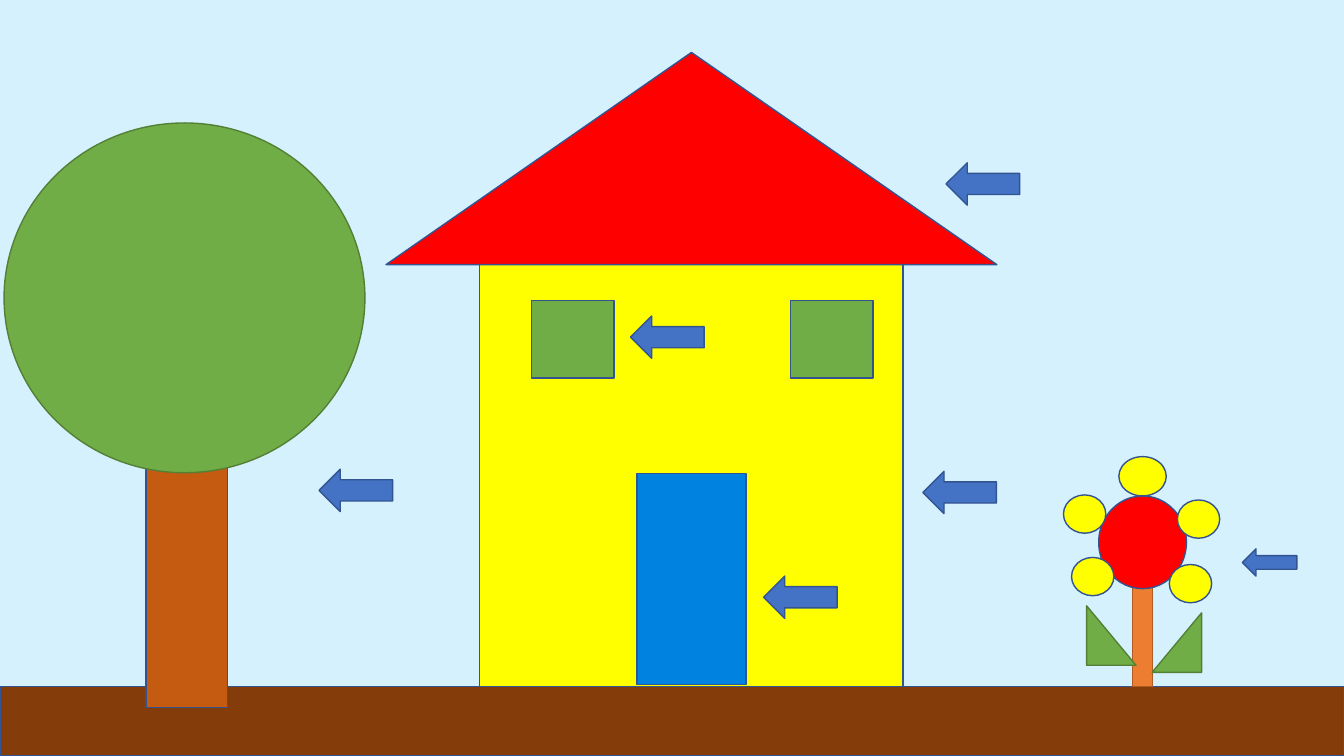
from pptx import Presentation
from pptx.dml.color import RGBColor
from pptx.enum.shapes import MSO_SHAPE as Preset
from pptx.util import Inches, Pt

THEME = {
    "sky": "D5F1FE", "soil": "843C0B", "wall": "FFFF00", "red": "FF0000",
    "door": "0082E0", "green": "70AD47", "stem": "ED7D31", "trunk": "C55A11",
    "arrow": "4472C4",
    "outline": "325491", "leaf_outline": "538035", "stem_outline": "AF5C24",
    "line_width": 1,
}
CELL = 0.1  # inches per grid column and row
COLUMNS, ROWS = 133.33, 75
GROUND = 68.1  # row where the soil starts


def grid(cells):
    return Inches(cells * CELL)


def draw(parent, preset, left, top, width, height, fill, outline="outline", rotation=0):
    shape = parent.shapes.add_shape(preset, *map(grid, (left, top, width, height)))
    shape.shadow.inherit = False
    shape.fill.solid()
    shape.fill.fore_color.rgb = RGBColor.from_string(THEME[fill])
    shape.line.color.rgb = RGBColor.from_string(THEME[outline])
    shape.line.width = Pt(THEME["line_width"])
    shape.rotation = rotation
    return shape


presentation = Presentation()
presentation.slide_width, presentation.slide_height = grid(COLUMNS), grid(ROWS)
slide = presentation.slides.add_slide(presentation.slide_layouts[6])

# Sky and soil
slide.background.fill.solid()
slide.background.fill.fore_color.rgb = RGBColor.from_string(THEME["sky"])
draw(slide, Preset.RECTANGLE, 0, GROUND, COLUMNS, ROWS - GROUND, "soil")

# House, centred on one axis
house = slide.shapes.add_group_shape()
house_axis, eaves = 68.6, 26.25
for preset, top, width, height, fill in [
    (Preset.RECTANGLE, eaves, 42, GROUND - eaves, "wall"),
    (Preset.ISOSCELES_TRIANGLE, 5.2, 60.6, eaves - 5.2, "red"),
    (Preset.RECTANGLE, 47, 10.8, 20.9, "door"),
]:
    draw(house, preset, house_axis - width / 2, top, width, height, fill)
for window_left in (78.4, 52.7):
    draw(house, Preset.RECTANGLE, window_left, 29.8, 8.2, 7.7, "green")

# Flower: stem, centre, leaves, petals
flower = slide.shapes.add_group_shape()
flower_axis = 113.35
draw(flower, Preset.RECTANGLE, flower_axis - 1, 52.2, 2, GROUND - 52.2, "stem", "stem_outline")
draw(flower, Preset.OVAL, flower_axis - 4.35, 49.2, 8.7, 9.2, "red")
for leaf_left, leaf_top, rotation in [(113.8, 61.3, 270), (107.3, 60.6, 90)]:
    leaf = draw(flower, Preset.RIGHT_TRIANGLE, leaf_left, leaf_top, 5.9, 4.9,
                "green", "leaf_outline", rotation)
leaf.element.spPr.xfrm.set("flipH", "1")  # the left leaf is mirrored
draw(flower, Preset.OVAL, flower_axis - 2.35, 45.3, 4.7, 3.9, "wall")
for petal_left, petal_top in [(116.8, 49.6), (116, 56), (105.5, 49.1), (106.3, 55.3)]:
    draw(flower, Preset.OVAL, petal_left, petal_top, 4.2, 3.8, "wall")

# Tree
tree = slide.shapes.add_group_shape()
draw(tree, Preset.RECTANGLE, 14.5, 38.5, 8.1, 31.7, "trunk")
draw(tree, Preset.OVAL, 0.4, 12.2, 35.8, 34.7, "green", "leaf_outline")

# Arrows pointing left at the parts
large, small = (4.2, 7.3), (2.7, 5.4)
for arrow_left, arrow_top, size in [
    (95.4, 14.6, large),   # roof
    (64.1, 29.8, large),   # window
    (77.3, 55.6, large),   # door
    (93.1, 45.2, large),   # wall
    (33.2, 45, large),     # tree
    (124.6, 53.1, small),  # flower
]:
    draw(slide, Preset.DOWN_ARROW, arrow_left, arrow_top, *size, "arrow", rotation=90)

presentation.save("out.pptx")
